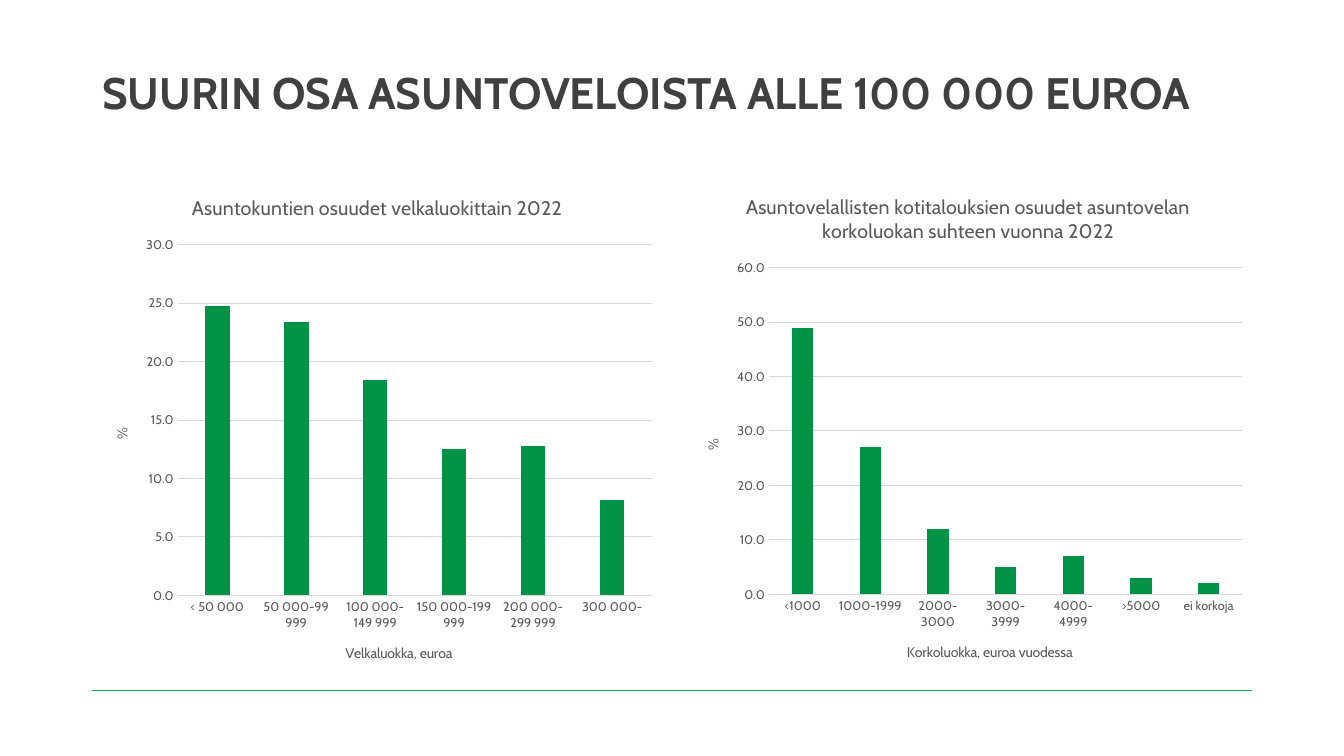
from dataclasses import dataclass

import pptx
import pptx.chart.data
import pptx.dml.color
import pptx.enum.chart
import pptx.enum.shapes
import pptx.enum.text
import pptx.oxml.ns
import pptx.oxml.xmlchemy
import pptx.text.text
import pptx.util
from pptx.util import Cm, Pt

FONT = "Cabin"
COLOURS = {
    "heading": "404040",
    "label": "595959",
    "grid": "D9D9D9",
    "bar": "009346",
    "rule": "00B050",
}


@dataclass
class ShareChart:
    left: float
    top: float
    title: str
    category_title: str
    shares: dict[str, float]


CHARTS = [
    ShareChart(
        2.31, 4.42,
        "Asuntokuntien osuudet velkaluokittain 2022",
        "Velkaluokka, euroa",
        {
            "< 50 000": 24.8,
            "50 000-99 999": 23.4,
            "100 000-149 999": 18.4,
            "150 000-199 999": 12.5,
            "200 000-299 999": 12.8,
            "300 000-": 8.2,
        },
    ),
    ShareChart(
        17.2, 4.39,
        "Asuntovelallisten kotitalouksien osuudet asuntovelan korkoluokan suhteen vuonna 2022",
        "Korkoluokka, euroa vuodessa",
        {
            "<1000": 49,
            "1000-1999": 27,
            "2000-3000": 12,
            "3000-3999": 5,
            "4000-4999": 7,
            ">5000": 3,
            "ei korkoja": 2,
        },
    ),
]


def colour(name: str) -> pptx.dml.color.RGBColor:
    return pptx.dml.color.RGBColor.from_string(COLOURS[name])


def style_font(font: pptx.text.text.Font, size: float, name: str, bold: bool = False) -> None:
    font.name = FONT
    font.size = Pt(size)
    font.bold = bold
    font.color.rgb = colour(name)


def write_chart_title(owner, text: str, size: float, rotation: int = 0) -> None:
    frame = owner.text_frame
    frame.text = text
    style_font(frame.paragraphs[0].font, size, "label")
    body = frame._txBody.find(pptx.oxml.ns.qn("a:bodyPr"))
    body.set("rot", str(rotation))
    body.set("vert", "horz")


def style_axis(axis, title: str, rotation: int = 0) -> None:
    axis.major_tick_mark = pptx.enum.chart.XL_TICK_MARK.NONE
    axis.minor_tick_mark = pptx.enum.chart.XL_TICK_MARK.NONE
    style_font(axis.tick_labels.font, 9, "label")
    body = axis._element.find(pptx.oxml.ns.qn("c:txPr")).find(pptx.oxml.ns.qn("a:bodyPr"))
    body.set("rot", "-60000000")
    body.set("vert", "horz")
    write_chart_title(axis.axis_title, title, 10, rotation)


def style_line(line, name: str, width: float) -> None:
    line.color.rgb = colour(name)
    line.width = Pt(width)


def add_share_chart(slide, item: ShareChart) -> None:
    data = pptx.chart.data.CategoryChartData(number_format="0.0")
    data.categories = list(item.shares)
    data.add_series("Series 1", list(item.shares.values()))
    chart = slide.shapes.add_chart(
        pptx.enum.chart.XL_CHART_TYPE.COLUMN_CLUSTERED,
        Cm(item.left), Cm(item.top), Cm(14.4), Cm(12.79), data,
    ).chart
    chart.font.name = FONT
    chart.font.size = Pt(10)
    chart.has_legend = False
    write_chart_title(chart.chart_title, item.title, 14)

    category_axis = chart.category_axis
    style_axis(category_axis, item.category_title)
    style_line(category_axis.format.line, "grid", 0.75)

    value_axis = chart.value_axis
    style_axis(value_axis, "%", -5400000)
    value_axis.format.line.fill.background()
    value_axis.tick_labels.number_format = "0.0"
    value_axis.tick_labels.number_format_is_linked = False
    style_line(value_axis.major_gridlines.format.line, "grid", 0.75)

    plot = chart.plots[0]
    plot.gap_width = 219
    plot.overlap = -27
    plot.vary_by_categories = False
    bars = plot.series[0].format.fill
    bars.solid()
    bars.fore_color.rgb = colour("bar")


def add_heading(slide, text: str) -> None:
    frame = slide.shapes.add_textbox(Cm(2.33), Cm(1.02), Cm(29.21), Cm(2.77)).text_frame
    frame.word_wrap = True
    frame.vertical_anchor = pptx.enum.text.MSO_ANCHOR.MIDDLE
    paragraph = frame.paragraphs[0]
    paragraph.text = text
    paragraph.line_spacing = 0.9
    style_font(paragraph.font, 31.5, "heading", bold=True)


def add_rule(slide) -> None:
    rule = slide.shapes.add_connector(
        pptx.enum.shapes.MSO_CONNECTOR.STRAIGHT, Cm(2.31), Cm(17.4), Cm(31.55), Cm(17.4)
    )
    style_line(rule.line, "rule", 1)
    rule._element.spPr.append(pptx.oxml.xmlchemy.OxmlElement("a:effectLst"))


def main() -> None:
    presentation = pptx.Presentation()
    presentation.slide_width = Cm(33.87)
    presentation.slide_height = Cm(19.05)
    slide = presentation.slides.add_slide(presentation.slide_layouts[6])
    add_rule(slide)
    add_heading(slide, "SUURIN OSA ASUNTOVELOISTA ALLE 100 000 EUROA")
    for item in CHARTS:
        add_share_chart(slide, item)
    presentation.save("out.pptx")


if __name__ == "__main__":
    main()
